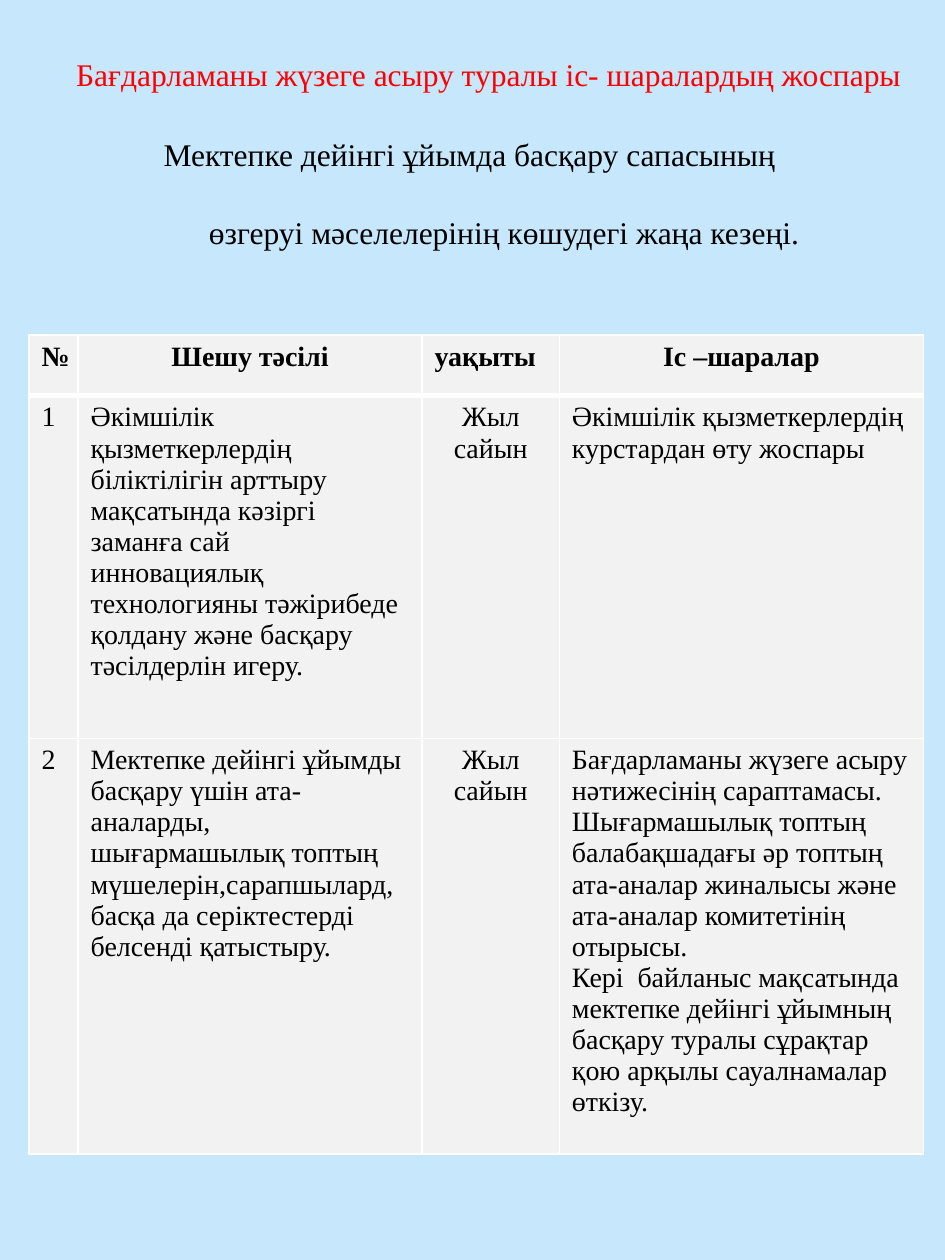
from lxml import etree
from pptx import Presentation
from pptx.dml.color import RGBColor
from pptx.enum.text import MSO_ANCHOR, MSO_AUTO_SIZE, PP_ALIGN
from pptx.oxml.ns import qn
from pptx.util import Inches, Pt

LEFT, CENTER = PP_ALIGN.LEFT, PP_ALIGN.CENTER
TOP, NO_FIT = MSO_ANCHOR.TOP, MSO_AUTO_SIZE.NONE
FONT = "Times New Roman"
COLORS = {"sky": "C6E7FC", "title": "FF0000", "text": "000000",
          "cell": "F2F2F2", "line": "FFFFFF"}

# Content
TITLE = "Бағдарламаны жүзеге асыру туралы іс- шаралардың жоспары"
STAGE = [  # text, left indent, space before
    ("Мектепке дейінгі ұйымда басқару сапасының", 0.03, 0),
    ("өзгеруі мәселелерінің көшудегі жаңа кезеңі.", 0.39, 23),
]
PLAN = [
    ("№", "Шешу тәсілі", "уақыты", "Іс –шаралар"),
    ("1",
     "Әкімшілік қызметкерлердің біліктілігін арттыру мақсатында кәзіргі "
     "заманға сай инновациялық технологияны тәжірибеде қолдану және "
     "басқару тәсілдерлін игеру.",
     "Жыл сайын",
     "Әкімшілік қызметкерлердің курстардан өту жоспары"),
    ("2",
     "Мектепке дейінгі ұйымды басқару үшін ата-аналарды, шығармашылық "
     "топтың мүшелерін,сарапшылард, басқа да серіктестерді белсенді "
     "қатыстыру.",
     "Жыл сайын",
     "Бағдарламаны жүзеге асыру нәтижесінің сараптамасы.\n"
     "Шығармашылық топтың балабақшадағы әр топтың ата-аналар жиналысы "
     "және ата-аналар комитетінің отырысы.\n"
     "Кері  байланыс мақсатында мектепке дейінгі ұйымның басқару туралы "
     "сұрақтар қою арқылы сауалнамалар өткізу."),
]
WIDTHS = [0.39, 2.73, 1.09, 2.89]
HEIGHTS = [0.48, 2.72, 3.3]
HEAD_ALIGN = [LEFT, CENTER, LEFT, CENTER]
BODY_ALIGN = [LEFT, LEFT, CENTER, LEFT]


def rgb(name):
    return RGBColor.from_string(COLORS[name])


def style(para, size, color="text", align=LEFT, bold=False):
    para.alignment = align
    for run in para.runs:
        font = run.font
        font.name, font.size, font.bold = FONT, Pt(size), bold
        font.color.rgb = rgb(color)


def border(cell, side, width):
    line = etree.SubElement(cell._tc.get_or_add_tcPr(), qn("a:ln" + side),
                            w=str(Pt(width)))
    fill = etree.SubElement(line, qn("a:solidFill"))
    etree.SubElement(fill, qn("a:srgbClr"), val=COLORS["line"])


deck = Presentation()
deck.slide_width, deck.slide_height = Inches(7.5), Inches(10)
slide = deck.slides.add_slide(deck.slide_layouts[5])
back = slide.background.fill
back.solid()
back.fore_color.rgb = rgb("sky")

# Title
title = slide.shapes.title
title.left, title.top = Inches(0.47), Inches(0.39)
title.width, title.height = Inches(6.82), Inches(0.71)
frame = title.text_frame
frame.text = TITLE
frame.auto_size, frame.vertical_anchor = NO_FIT, TOP
style(frame.paragraphs[0], 18, "title", CENTER)

# Stage name, second line stepped to the right
box = slide.shapes.add_textbox(Inches(1.17), Inches(1.02),
                               Inches(5.73), Inches(1.01))
frame = box.text_frame
frame.word_wrap = True
frame.text = "\n".join(text for text, *_ in STAGE)
for para, (_, indent, space) in zip(frame.paragraphs, STAGE):
    style(para, 18)
    para.space_before = Pt(space)
    para._p.get_or_add_pPr().set("marL", str(Inches(indent)))

# Plan table
table = slide.shapes.add_table(
    len(PLAN), len(WIDTHS), Inches(0.23), Inches(2.66),
    Inches(sum(WIDTHS)), Inches(sum(HEIGHTS))).table
for col, width in zip(table.columns, WIDTHS):
    col.width = Inches(width)
for r, texts in enumerate(PLAN):
    table.rows[r].height = Inches(HEIGHTS[r])
    head = r == 0
    for c, text in enumerate(texts):
        cell = table.cell(r, c)
        cell.text_frame.text = text
        align = (HEAD_ALIGN if head else BODY_ALIGN)[c]
        for para in cell.text_frame.paragraphs:
            style(para, 16, align=align, bold=head)
        for side in "LRTB":
            thick = (head and side == "B") or (r == 1 and side == "T")
            border(cell, side, 3 if thick else 1)
        cell.fill.solid()
        cell.fill.fore_color.rgb = rgb("cell")

deck.save("out.pptx")
